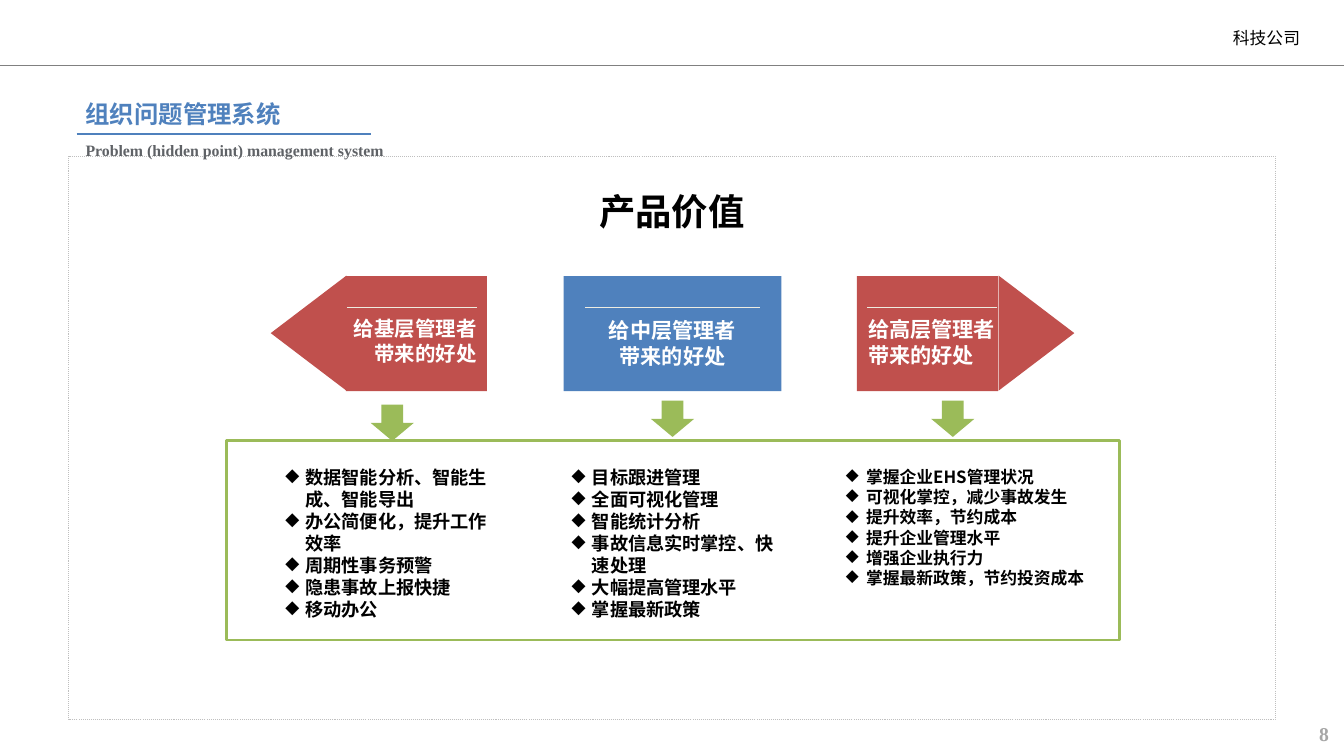
from dataclasses import dataclass

from lxml import etree
from pptx import Presentation
from pptx.dml.color import RGBColor
from pptx.enum.dml import MSO_LINE
from pptx.enum.shapes import MSO_CONNECTOR, MSO_SHAPE
from pptx.enum.text import MSO_ANCHOR, PP_ALIGN
from pptx.oxml.ns import qn
from pptx.util import Inches, Pt

LEFT, CENTER, RIGHT, JUSTIFY = PP_ALIGN.LEFT, PP_ALIGN.CENTER, PP_ALIGN.RIGHT, PP_ALIGN.JUSTIFY
TOP, MIDDLE = MSO_ANCHOR.TOP, MSO_ANCHOR.MIDDLE
RECTANGLE, TRIANGLE = MSO_SHAPE.RECTANGLE, MSO_SHAPE.ISOSCELES_TRIANGLE
ARROW, STRAIGHT, DOTTED = MSO_SHAPE.RIGHT_ARROW, MSO_CONNECTOR.STRAIGHT, MSO_LINE.ROUND_DOT


@dataclass(frozen=True)
class Theme:
    black: str = "000000"
    white: str = "FFFFFF"
    blue: str = "4F81BD"
    red: str = "C0504D"
    green: str = "9BBB59"
    cream: str = "EEECE1"
    slate: str = "5F6266"
    rule: str = "808080"
    frame: str = "BFBFBF"
    number: str = "A6A6A6"
    sans: str = "Arial"
    heading_font: str = "Calibri"
    serif: str = "Times New Roman"
    chinese: str = "Noto Sans CJK SC"
    title_size: float = 26
    heading_size: float = 17.4
    subheading_size: float = 11.3
    banner_size: float = 15.1
    small_banner_size: float = 14.6
    list_size: float = 13
    small_size: float = 12
    number_size: float = 14


theme = Theme()
DEFAULT_INSETS = (0.1, 0.05, 0.1, 0.05)
TIGHT_INSETS = (0.08, 0.04, 0.08, 0.04)

presentation = Presentation()
presentation.slide_width, presentation.slide_height = Inches(13.33), Inches(7.5)
slide = presentation.slides.add_slide(presentation.slide_layouts[5])


def write(shape, lines, font, size, color, bold=True, align=LEFT,
          anchor=TOP, insets=DEFAULT_INSETS, bullet=None):
    frame = shape.text_frame
    frame.word_wrap, frame.vertical_anchor = True, anchor
    (frame.margin_left, frame.margin_top,
     frame.margin_right, frame.margin_bottom) = map(Inches, insets)
    for index, line in enumerate(lines):
        paragraph = frame.add_paragraph() if index else frame.paragraphs[0]
        paragraph.alignment = align
        if bullet:
            properties = paragraph._p.get_or_add_pPr()
            properties.set("marL", str(Inches(0.2)))
            properties.set("indent", str(Inches(-0.2)))
            etree.SubElement(properties, qn("a:buChar"), char=bullet)
        run = paragraph.add_run()
        run.text = line
        run.font.name, run.font.size, run.font.bold = font, Pt(size), bold
        run.font.color.rgb = RGBColor.from_string(color)
        etree.SubElement(run._r.get_or_add_rPr(), qn("a:ea"), typeface=theme.chinese)


def add_rule(left, right, y, color, width):
    rule = slide.shapes.add_connector(STRAIGHT, *map(Inches, (left, y, right, y)))
    rule.line.color.rgb, rule.line.width = RGBColor.from_string(color), Pt(width)
    etree.SubElement(rule._element.spPr, qn("a:effectLst"))


# Outlined frames: page area and benefits box
for bounds, color, width, dash in [
    ((0.68, 1.55, 11.97, 5.59), theme.frame, 0.75, DOTTED),
    ((2.25, 4.37, 8.85, 1.98), theme.green, 2, None),
]:
    outline = slide.shapes.add_shape(RECTANGLE, *map(Inches, bounds))
    outline.shadow.inherit = False
    outline.fill.background()
    outline.line.color.rgb, outline.line.width = RGBColor.from_string(color), Pt(width)
    outline.line.dash_style = dash

# Banners, their points and the arrows below
for kind, bounds, color, rotation in [
    (RECTANGLE, (3.43, 2.74, 1.4, 1.14), theme.red, 0),
    (TRIANGLE, (2.49, 2.93, 1.14, 0.75), theme.red, 270),
    (RECTANGLE, (5.59, 2.74, 2.16, 1.14), theme.blue, 0),
    (RECTANGLE, (8.5, 2.74, 1.4, 1.14), theme.red, 0),
    (TRIANGLE, (9.71, 2.93, 1.14, 0.75), theme.red, 90),
    (ARROW, (3.71, 3.98, 0.36, 0.43), theme.green, 90),
    (ARROW, (6.49, 3.94, 0.36, 0.43), theme.green, 90),
    (ARROW, (9.27, 3.94, 0.36, 0.43), theme.green, 90),
]:
    shape = slide.shapes.add_shape(kind, *map(Inches, bounds))
    shape.shadow.inherit = False
    shape.rotation = rotation
    shape.fill.solid()
    shape.fill.fore_color.rgb = RGBColor.from_string(color)
    shape.line.fill.background()

# Header, heading and banner rules
add_rule(0, 13.33, 0.65, theme.rule, 1.25)
add_rule(0.76, 3.68, 1.33, theme.blue, 1.5)
for left, right in [(3.44, 4.73), (5.8, 7.54), (8.6, 9.89)]:
    add_rule(left, right, 3.05, theme.cream, 0.75)

# Title
title = slide.shapes.title
title.left, title.top, title.width, title.height = map(Inches, (5.57, 1.76, 2.19, 0.72))
write(title, ["产品价值"], theme.sans, theme.title_size, theme.black,
      align=CENTER, anchor=MIDDLE, insets=TIGHT_INSETS)
title.text_frame.paragraphs[0].line_spacing = 0.9

# Company, headings and page number
company = slide.shapes.add_textbox(*map(Inches, (12.13, 0.26, 0.84, 0.23)))
write(company, ["科技公司"], theme.sans, theme.small_size, theme.black, bold=False,
      align=JUSTIFY, anchor=MIDDLE, insets=(0.1, 0.01, 0.02, 0.01))
heading = slide.shapes.add_textbox(*map(Inches, (0.75, 0.93, 3.95, 0.68)))
write(heading, ["组织问题管理系统"], theme.heading_font, theme.heading_size, theme.blue)
subheading = slide.shapes.add_textbox(*map(Inches, (0.75, 1.35, 3.78, 0.29)))
write(subheading, ["Problem (hidden point) management system"],
      theme.serif, theme.subheading_size, theme.slate)
page_number = slide.shapes.add_textbox(*map(Inches, (12.13, 7.11, 1.15, 0.34)))
write(page_number, ["8"], theme.serif, theme.number_size, theme.number, align=RIGHT)

# Banner labels
for left, top, label, size, align in [
    (3.37, 3.1, "给基层管理者带来的好处", theme.small_banner_size, RIGHT),
    (5.95, 3.11, "给中层管理者带来的好处", theme.banner_size, CENTER),
    (8.53, 3.1, "给高层管理者带来的好处", theme.banner_size, LEFT),
]:
    banner_label = slide.shapes.add_textbox(*map(Inches, (left, top, 1.44, 0.73)))
    write(banner_label, [label], theme.sans, size, theme.white,
          align=align, insets=TIGHT_INSETS)

# Benefit lists
for left, width, height, size, benefits in [
    (2.75, 2.28, 1.34, theme.list_size, [
        "数据智能分析、智能生成、智能导出", "办公简便化，提升工作效率",
        "周期性事务预警", "隐患事故上报快捷", "移动办公"]),
    (5.59, 2.28, 1.34, theme.list_size, [
        "目标跟进管理", "全面可视化管理", "智能统计分析",
        "事故信息实时掌控、快速处理", "大幅提高管理水平", "掌握最新政策"]),
    (8.31, 2.73, 1.22, theme.small_size, [
        "掌握企业EHS管理状况", "可视化掌控，减少事故发生", "提升效率，节约成本",
        "提升企业管理水平", "增强企业执行力", "掌握最新政策，节约投资成本"]),
]:
    benefit_list = slide.shapes.add_textbox(*map(Inches, (left, 4.59, width, height)))
    write(benefit_list, benefits, theme.chinese, size, theme.black,
          insets=TIGHT_INSETS, bullet="◆")

presentation.save("out.pptx")
